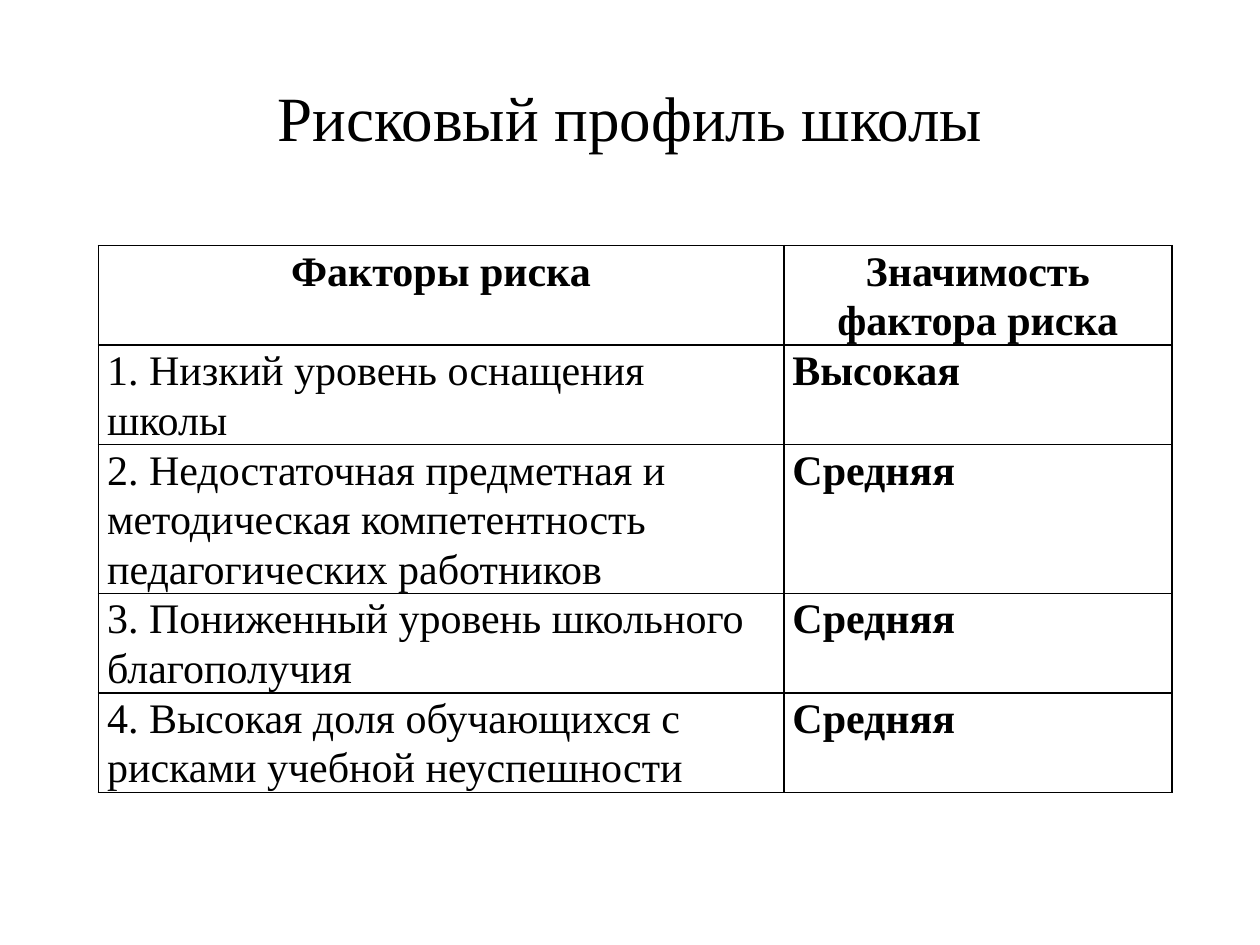
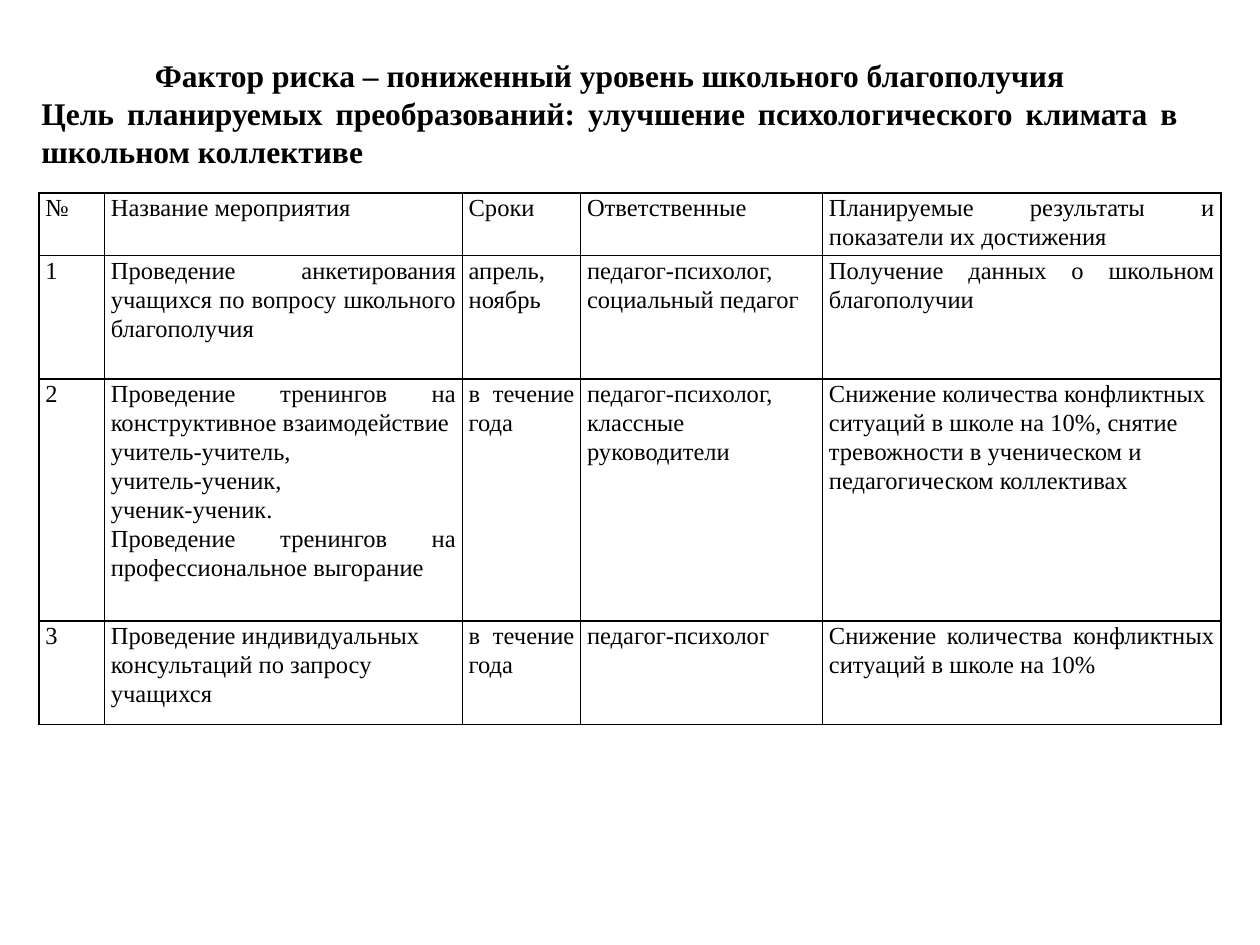
"""Builds two slides on the risk profile of a school."""
from dataclasses import dataclass

from lxml import etree
from pptx import Presentation
from pptx.dml.color import RGBColor
from pptx.enum.text import MSO_ANCHOR, PP_ALIGN
from pptx.oxml.ns import qn
from pptx.util import Inches, Pt

LEFT, MID, JUST = PP_ALIGN.LEFT, PP_ALIGN.CENTER, PP_ALIGN.JUSTIFY
MIDDLE = MSO_ANCHOR.MIDDLE


@dataclass(frozen=True)
class Theme:
    font: str = "Times New Roman"
    ink: str = "000000"
    title: int = 36
    large: int = 24
    head: int = 18
    small: int = 14
    thin: float = 1
    thick: float = 1.5
    space: float = 1.07
    pitch: float = 28.3


def write(frame, text, font, size, ink, bold=False, align=LEFT, space=None):
    lines = text if isinstance(text, list) else [text]
    for num, line in enumerate(lines):
        words, side = line if isinstance(line, tuple) else (line, align)
        para = frame.add_paragraph() if num else frame.paragraphs[0]
        para.alignment = side
        if space:
            para.line_spacing = space
        run = para.add_run()
        run.text = words
        run.font.name = font
        run.font.size = Pt(size)
        run.font.bold = bold
        run.font.color.rgb = RGBColor.from_string(ink)


class Deck:
    def __init__(self, theme):
        self.theme = theme
        self.show = Presentation()
        self.show.slide_width, self.show.slide_height = Inches(10), Inches(7.5)
        self.slide = None

    def page(self):
        self.slide = self.show.slides.add_slide(self.show.slide_layouts[6])

    def text(self, box, text, **form):
        frame = self.slide.shapes.add_textbox(*map(Inches, box)).text_frame
        frame.word_wrap = True
        frame.vertical_anchor = MIDDLE
        write(frame, text, self.theme.font, ink=self.theme.ink, **form)

    def edge(self, cell, sides):
        props = cell._tc.get_or_add_tcPr()
        for spot, (side, width) in enumerate(sides.items()):
            line = etree.Element(qn(f"a:ln{side}"), w=str(Pt(width)))
            fill = etree.SubElement(line, qn("a:solidFill"))
            etree.SubElement(fill, qn("a:srgbClr"), val=self.theme.ink)
            props.insert(spot, line)

    def table(self, left, top, cols, highs, rows, form, pad, rules):
        grid = self.slide.shapes.add_table(
            len(rows), len(cols), Inches(left), Inches(top),
            Inches(sum(cols)), Inches(sum(highs))).table
        grid.first_row = grid.horz_banding = False
        for col, width in zip(grid.columns, cols):
            col.width = Inches(width)
        for row, high in zip(grid.rows, highs):
            row.height = Inches(high)
        thin = self.theme.thin
        for y, row in enumerate(rows):
            for x, words in enumerate(row):
                cell = grid.cell(y, x)
                cell.margin_left = cell.margin_right = Inches(pad)
                cell.margin_top = cell.margin_bottom = 0
                cell.fill.background()
                self.edge(cell, {"L": rules[x], "R": rules[x + 1], "T": thin, "B": thin})
                write(cell.text_frame, words, self.theme.font, ink=self.theme.ink,
                      **form(y, x))


def risks(deck):
    look = deck.theme
    deck.page()
    deck.text((0.5, 0.3, 9, 1.25), "Рисковый профиль школы", size=look.title, align=MID)
    rows = [
        ("Факторы риска", "Значимость фактора риска"),
        ("1. Низкий уровень оснащения школы", "Высокая"),
        ("2. Недостаточная предметная и методическая компетентность "
         "педагогических работников", "Средняя"),
        ("3. Пониженный уровень школьного благополучия", "Средняя"),
        ("4. Высокая доля обучающихся с рисками учебной неуспешности", "Средняя"),
    ]

    def form(y, x):
        align = MID if y == 0 else JUST if x else LEFT
        return {"size": look.large, "bold": y == 0 or x == 1, "align": align,
                "space": Pt(look.pitch)}

    deck.table(0.78, 1.95, (5.44, 3.08), (0.79, 0.79, 1.18, 0.79, 0.79), rows, form,
               pad=0.07, rules=(look.thin, look.thick, look.thick))


def plan(deck):
    look = deck.theme
    deck.page()
    deck.text((0.23, 0.39, 9.22, 1.01), [
        ("Фактор риска – пониженный уровень школьного благополучия", MID),
        "Цель планируемых преобразований: улучшение психологического климата "
        "в школьном коллективе",
    ], size=look.head, bold=True, align=JUST)
    rows = [
        ("№", "Название мероприятия", "Сроки", "Ответственные",
         "Планируемые результаты и показатели их достижения"),
        ("1", "Проведение анкетирования учащихся по вопросу школьного благополучия",
         ["апрель,", "ноябрь"], "педагог-психолог, социальный педагог",
         "Получение данных о школьном благополучии"),
        ("2", ["Проведение тренингов на конструктивное взаимодействие",
               ("учитель-учитель,", LEFT), ("учитель-ученик,", LEFT),
               ("ученик-ученик.", LEFT),
               "Проведение тренингов на профессиональное выгорание"],
         "в течение года", "педагог-психолог, классные руководители",
         ("Снижение количества конфликтных ситуаций в школе на 10%, снятие "
          "тревожности в ученическом и педагогическом коллективах", LEFT)),
        ("3", ("Проведение индивидуальных консультаций по запросу учащихся", LEFT),
         "в течение года", "педагог-психолог",
         "Снижение количества конфликтных ситуаций в школе на 10%"),
    ]
    cols = (0.52, 2.84, 0.94, 1.92, 3.16)
    deck.table(0.31, 1.53, cols, (0.49, 0.98, 1.92, 0.82), rows,
               lambda y, x: {"size": look.small, "align": JUST, "space": look.space},
               pad=0.05, rules=[look.thin] * (len(cols) + 1))


def main():
    deck = Deck(Theme())
    risks(deck)
    plan(deck)
    deck.show.save("out.pptx")


if __name__ == "__main__":
    main()
